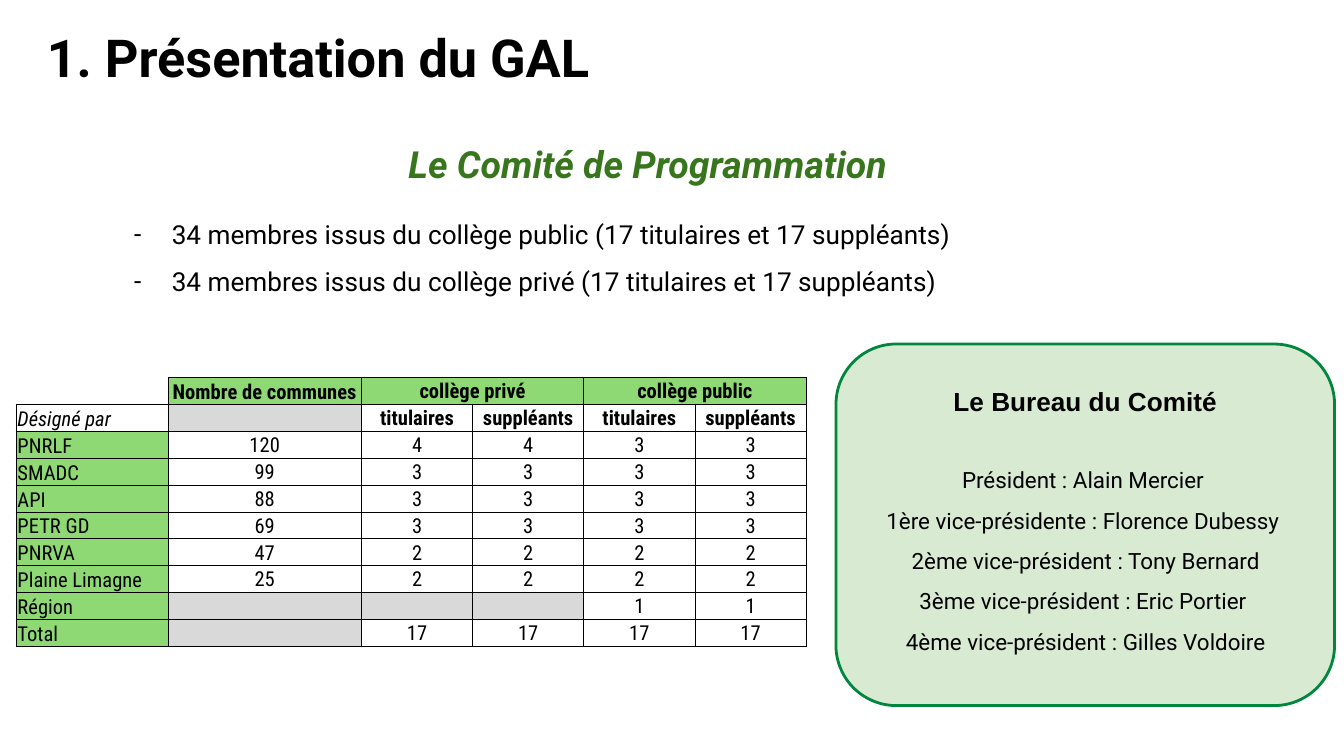
from lxml import etree
from pptx import Presentation
from pptx.dml.color import RGBColor
from pptx.enum import shapes, text
from pptx.oxml import ns
from pptx.util import Inches, Pt

# Content
TITLE = ["1. Présentation du GAL"]
TOPIC = ["Le Comité de Programmation"]
MEMBERS = [
    "34 membres issus du collège public (17 titulaires et 17 suppléants)",
    "34 membres issus du collège privé (17 titulaires et 17 suppléants)",
]
BUREAU = ["Le Bureau du Comité"]
ROLES = [
    "Président : Alain Mercier ",
    "1ère vice-présidente : Florence Dubessy ",
    "2ème vice-président : Tony Bernard",
    "3ème vice-président : Eric Portier ",
    "4ème vice-président : Gilles Voldoire",
]
SEATS = [
    ["", "Nombre de communes", "collège privé", "", "collège public", ""],
    ["Désigné par", "", "titulaires", "suppléants", "titulaires", "suppléants"],
    ["PNRLF", "120", "4", "4", "3", "3"],
    ["SMADC", "99", "3", "3", "3", "3"],
    ["API", "88", "3", "3", "3", "3"],
    ["PETR GD", "69", "3", "3", "3", "3"],
    ["PNRVA", "47", "2", "2", "2", "2"],
    ["Plaine Limagne", "25", "2", "2", "2", "2"],
    ["Région", "", "", "", "1", "1"],
    ["Total", "", "17", "17", "17", "17"],
]
WIDE = 10
SPAN, NAME, TOWNS = 5.88, 1.13, 1.44
WIDTHS = [NAME, TOWNS] + [(SPAN - NAME - TOWNS) / 4] * 4
ROW = 0.2

COLORS = {
    "black": "000000", "topic": "38761D", "panel": "D9EAD3",
    "edge": "00863D", "head": "8ED973", "empty": "D9D9D9",
}
NO_STYLE = "{2D5ABB26-0587-4C30-8999-92F81FD0307C}"
LEFT, CENTER = text.PP_ALIGN.LEFT, text.PP_ALIGN.CENTER
TOP, MIDDLE, BOTTOM = (text.MSO_ANCHOR.TOP, text.MSO_ANCHOR.MIDDLE,
                       text.MSO_ANCHOR.BOTTOM)


def color(name):
    return RGBColor.from_string(COLORS[name])


def add_run(para, label, look, tone="black"):
    run = para.add_run()
    run.text = label
    for key, value in look.items():
        setattr(run.font, key, value)
    run.font.color.rgb = color(tone)


def set_pad(part, pad):
    for side, gap in zip(("left", "top", "right", "bottom"), pad):
        setattr(part, "margin_" + side, Inches(gap))


def write(frame, lines, look, tone="black", align=LEFT, space=1.0,
          anchor=TOP, pad=(0.1, 0.1, 0.1, 0.1)):
    """Fill a text frame with one paragraph per line."""
    frame.word_wrap = True
    frame.vertical_anchor = anchor
    set_pad(frame, pad)
    for i, line in enumerate(lines):
        para = frame.paragraphs[0] if i == 0 else frame.add_paragraph()
        para.alignment, para.line_spacing = align, space
        add_run(para, line, look, tone)


def box(slide, at, *args, **opts):
    shape = slide.shapes.add_textbox(*map(Inches, at))
    write(shape.text_frame, *args, **opts)
    return shape.text_frame


def dash(para):
    """Hang the paragraph behind a dash bullet."""
    props = para._p.get_or_add_pPr()
    props.set("marL", str(Inches(0.38)))
    props.set("indent", str(Inches(-0.28)))
    tint = etree.SubElement(props, ns.qn("a:buClr"))
    etree.SubElement(tint, ns.qn("a:srgbClr"), val=COLORS["black"])
    etree.SubElement(props, ns.qn("a:buFont"), typeface="Roboto")
    etree.SubElement(props, ns.qn("a:buChar"), char="-")


def border(cell):
    props = cell._tc.get_or_add_tcPr()
    for side in "LRTB":
        line = etree.SubElement(props, ns.qn("a:ln" + side), w=str(Pt(0.5)))
        fill = etree.SubElement(line, ns.qn("a:solidFill"))
        etree.SubElement(fill, ns.qn("a:srgbClr"), val=COLORS["black"])


def fill_cell(cell, r, c, label):
    corner = (r, c) == (0, 0)
    set_pad(cell, (0.01, 0.01, 0.01, 0))
    cell.vertical_anchor = BOTTOM if c == 0 or (r, c) == (0, 1) else MIDDLE
    para = cell.text_frame.paragraphs[0]
    para.alignment = LEFT if c == 0 else CENTER
    if label:
        add_run(para, label, {
            "name": "Roboto Condensed", "size": Pt(11),
            "bold": r < 2 and c > 0, "italic": (r, c) == (1, 0)})
    else:
        # Keep empty cells from stretching their row
        etree.SubElement(para._p, ns.qn("a:endParaRPr"), sz="1100")
    if not corner:
        border(cell)
    tone = None
    if not corner and (r == 0 or (c == 0 and r > 1)):
        tone = "head"
    elif not corner and not label:
        tone = "empty"
    if tone:
        cell.fill.solid()
        cell.fill.fore_color.rgb = color(tone)
    else:
        cell.fill.background()


def add_seats(slide):
    frame = slide.shapes.add_table(
        len(SEATS), len(WIDTHS), Inches(0.12), Inches(2.81),
        Inches(SPAN), Inches(ROW * len(SEATS)))
    table = frame.table
    table.first_row = table.horz_banding = False
    table._tbl.tblPr.find(ns.qn("a:tableStyleId")).text = NO_STYLE
    for col, width in zip(table.columns, WIDTHS):
        col.width = Inches(width)
    for r, labels in enumerate(SEATS):
        table.rows[r].height = Inches(ROW)
        for c, label in enumerate(labels):
            fill_cell(table.cell(r, c), r, c, label)
    for c in (2, 4):
        table.cell(0, c).merge(table.cell(0, c + 1))


def main():
    deck = Presentation()
    deck.slide_width, deck.slide_height = Inches(WIDE), Inches(WIDE * 9 / 16)
    slide = deck.slides.add_slide(deck.slide_layouts[6])

    # Topic heading
    box(slide, (2.72, 1.01, 4.2, 0.46), TOPIC,
        {"name": "Roboto", "size": Pt(20), "bold": True, "italic": True},
        tone="topic", align=CENTER, space=0.9, anchor=MIDDLE,
        pad=(0.07, 0.04, 0.07, 0.04))

    # Bureau panel
    panel = slide.shapes.add_shape(
        shapes.MSO_SHAPE.ROUNDED_RECTANGLE,
        *map(Inches, (6.22, 2.56, 3.71, 2.69)))
    panel.shadow.inherit = False
    panel.fill.solid()
    panel.fill.fore_color.rgb = color("panel")
    panel.line.color.rgb = color("edge")
    panel.line.width = Pt(1.5)
    write(panel.text_frame, BUREAU,
          {"name": "Arial", "size": Pt(14), "bold": True},
          align=CENTER, space=1.15, pad=(0.1, 0.14, 0.1, 0.1))

    # Member list
    members = box(slide, (0.8, 1.41, 8.07, 1.05), MEMBERS,
                  {"name": "Roboto", "size": Pt(14)}, space=1.5)
    members.paragraphs[0].space_before = Pt(10)
    for para in members.paragraphs:
        dash(para)

    # Bureau roles
    box(slide, (6.23, 3.27, 3.7, 1.72), ROLES,
        {"name": "Roboto", "size": Pt(12)}, align=CENTER, space=1.5)

    # Slide title
    box(slide, (0.25, 0.14, 5.23, 0.57), TITLE,
        {"name": "Roboto", "size": Pt(28), "bold": True},
        pad=(0.1, 0.05, 0.1, 0.05))

    add_seats(slide)
    deck.save("out.pptx")


if __name__ == "__main__":
    main()
